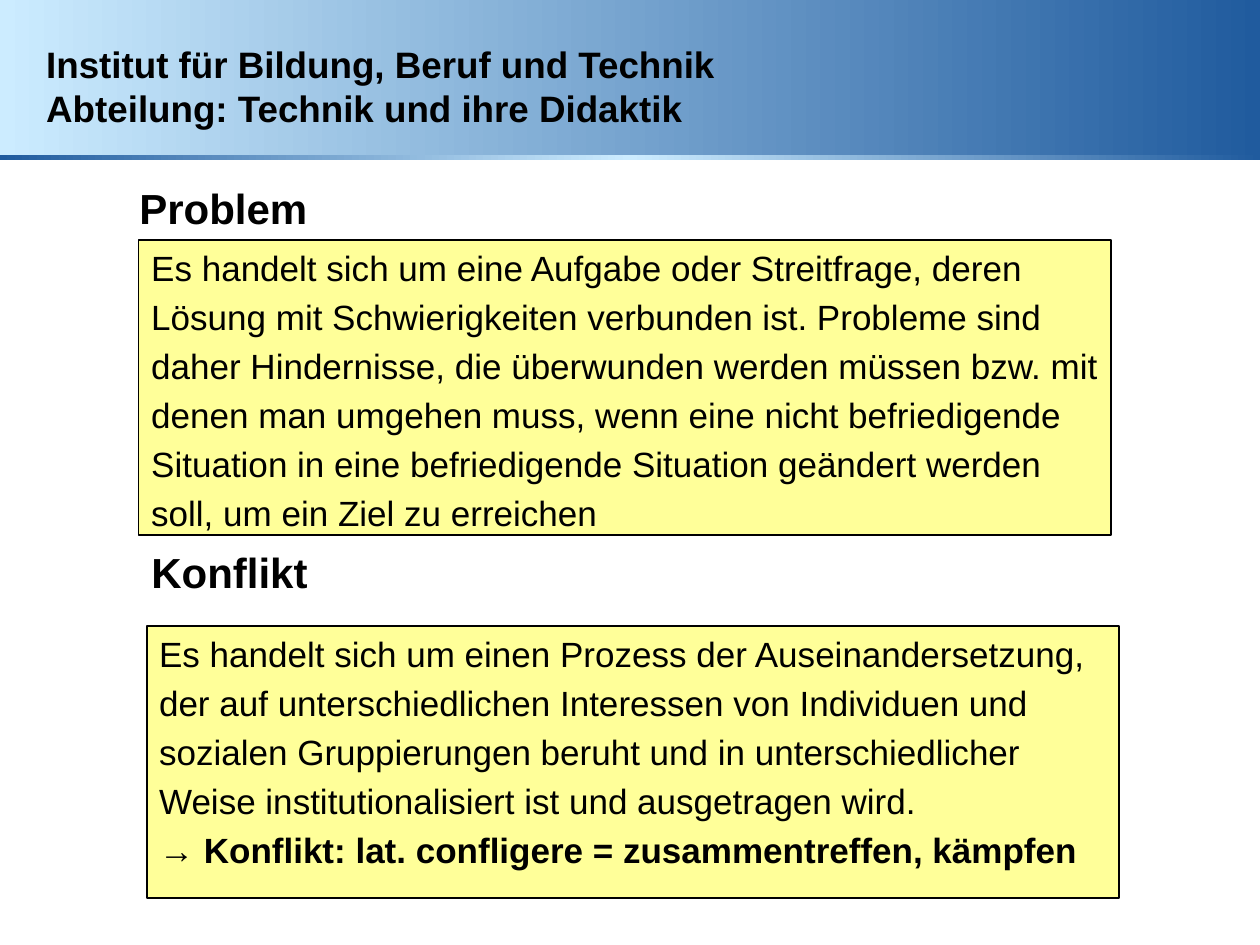
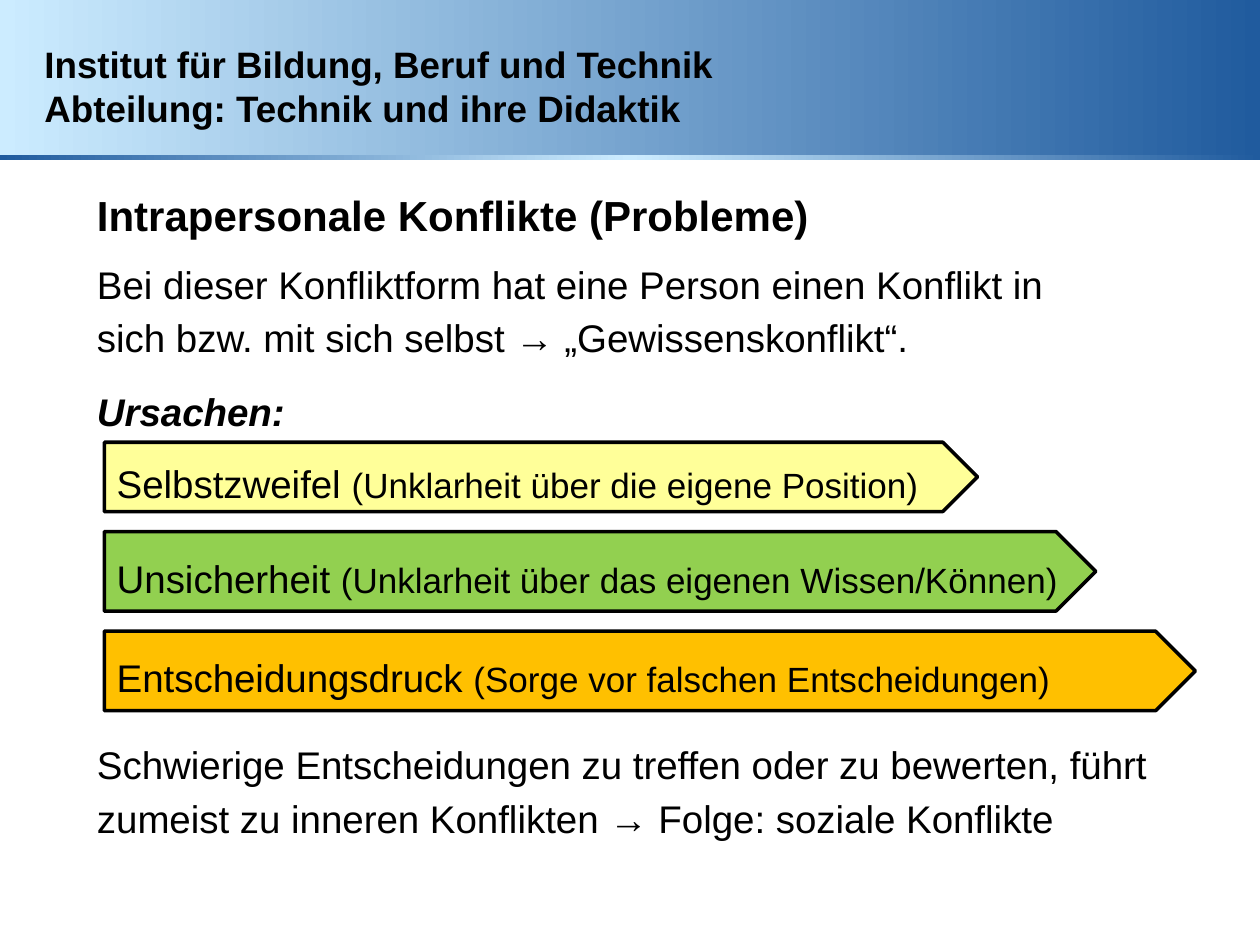
from copy import deepcopy
from dataclasses import dataclass

from pptx import Presentation
from pptx.dml.color import RGBColor
from pptx.enum.shapes import MSO_SHAPE
from pptx.enum.text import MSO_ANCHOR, MSO_AUTO_SIZE, PP_ALIGN
from pptx.oxml.ns import qn
from pptx.util import Pt

RECT, ARROW = MSO_SHAPE.RECTANGLE, MSO_SHAPE.PENTAGON
TOP, MIDDLE = MSO_ANCHOR.TOP, MSO_ANCHOR.MIDDLE
LEFT = PP_ALIGN.LEFT
FIXED = MSO_AUTO_SIZE.NONE
WIDTH, HEIGHT = 720, 540


@dataclass(frozen=True)
class Theme:
    font: str = "Arial"
    ink: str = "000000"
    pale: str = "CCECFF"
    deep: str = "205B9E"
    yellow: str = "FFFF99"
    green: str = "92D050"
    orange: str = "FFC000"
    head: int = 21
    title: int = 24
    lead: int = 22
    text: int = 20
    gap: int = 4


THEME = Theme()
INSTITUTE = ("Institut für Bildung, Beruf und Technik",
             "Abteilung: Technik und ihre Didaktik")
PROBLEM = (
    "Es handelt sich um eine Aufgabe oder Streitfrage, deren",
    "Lösung mit Schwierigkeiten verbunden ist. Probleme sind",
    "daher Hindernisse, die überwunden werden müssen bzw. mit",
    "denen man umgehen muss, wenn eine nicht befriedigende",
    "Situation in eine befriedigende Situation geändert werden",
    "soll, um ein Ziel zu erreichen",
)
CONFLICT = (
    "Es handelt sich um einen Prozess der Auseinandersetzung,",
    "der auf unterschiedlichen Interessen von Individuen und",
    "sozialen Gruppierungen beruht und in unterschiedlicher",
    "Weise institutionalisiert ist und ausgetragen wird.",
)
# Name, detail, top, width, height, colour
CAUSES = (
    ("Selbstzweifel ", "(Unklarheit über die eigene Position)",
     252.7, 499, 39.6, THEME.yellow),
    ("Unsicherheit ", "(Unklarheit über das eigenen Wissen/Können)",
     303.8, 566.6, 45.4, THEME.green),
    ("Entscheidungsdruck ", "(Sorge vor falschen Entscheidungen)",
     360.7, 623.5, 45.4, THEME.orange),
)


def place(shape, box):
    shape.left, shape.top, shape.width, shape.height = map(Pt, box)


def paint(shape, color, weight):
    shape.fill.solid()
    shape.fill.fore_color.rgb = RGBColor.from_string(color)
    shape.line.color.rgb = RGBColor.from_string(THEME.ink)
    shape.line.width = Pt(weight)


def set_frame(shape, anchor=TOP):
    frame = shape.text_frame
    frame.word_wrap = True
    frame.auto_size = FIXED
    frame.vertical_anchor = anchor
    return frame


def add_run(para, text, size, bold=False, italic=False):
    run = para.add_run()
    run.text = text
    font = run.font
    font.name, font.size = THEME.font, Pt(size)
    font.bold, font.italic = bold, italic
    font.color.rgb = RGBColor.from_string(THEME.ink)


def add_para(frame, gap=THEME.gap):
    """Return a flush-left paragraph without bullet; the first one has no gap."""
    first = frame.paragraphs[0]
    para = frame.add_paragraph() if first.runs else first
    props = para._p.get_or_add_pPr()
    props.set("marL", "0")
    props.set("indent", "0")
    props.append(props.makeelement(qn("a:buNone"), {}))
    para.alignment = LEFT
    para.space_before = Pt(gap if first.runs else 0)
    return para


def add_lines(frame, lines, size):
    for line in lines:
        add_run(add_para(frame), line, size)


def add_band(slide, layout, index, box, colors):
    """Put a horizontal gradient bar at the back of the layout."""
    band = slide.shapes.add_shape(RECT, *map(Pt, box))
    band.shadow.inherit = False
    band.line.fill.background()
    band.fill.gradient()
    band.fill.gradient_angle = 0
    stops = band.element.find(".//" + qn("a:gsLst"))
    for _ in colors[2:]:
        stops.append(deepcopy(stops[0]))
    for i, (stop, color) in enumerate(zip(band.fill.gradient_stops, colors)):
        stop.color.rgb = RGBColor.from_string(color)
        stop.position = i / (len(colors) - 1)
    layout.shapes.element.insert(2 + index, band.element)


def add_bands(slide, layout):
    pale, deep = THEME.pale, THEME.deep
    add_band(slide, layout, 0, (0, 0, WIDTH, 90.7), (pale, deep))
    add_band(slide, layout, 1, (0, 88.6, WIDTH, 2.9), (deep, pale, deep))


def add_head(slide, left):
    box = slide.shapes.add_textbox(*map(Pt, (left, 15.1, 461.5, 67.7)))
    para = add_para(set_frame(box, MIDDLE))
    for i, line in enumerate(INSTITUTE):
        if i:
            para.add_line_break()
        add_run(para, line, THEME.head, bold=True)


def add_title(shape, text, box, anchor=TOP):
    place(shape, box)
    add_run(add_para(set_frame(shape, anchor)), text, THEME.title, bold=True)


def add_shape(slide, kind, box, color, weight):
    shape = slide.shapes.add_shape(kind, *map(Pt, box))
    shape.shadow.inherit = False
    paint(shape, color, weight)
    return shape


def add_cause(slide, name, detail, top, width, height, color):
    arrow = add_shape(slide, ARROW, (59.6, top, width, height), color, 2)
    frame = set_frame(arrow, MIDDLE)
    frame.margin_top = Pt(11)
    para = add_para(frame)
    add_run(para, name, THEME.lead)
    add_run(para, detail, THEME.text)


def fill_terms(slide):
    add_head(slide, 19.3)
    add_title(slide.shapes.title, "Problem", (72.4, 100.8, 612, 45.4))
    body = slide.placeholders[1]
    place(body, (79.2, 137.2, 555.8, 168.5))
    paint(body, THEME.yellow, 1)
    add_lines(set_frame(body), PROBLEM, THEME.text)

    label = slide.shapes.add_textbox(0, 0, 0, 0)
    add_title(label, "Konflikt", (79.4, 308.9, 612, 45.4))
    box = add_shape(slide, RECT, (83.8, 357.8, 555.8, 155.5), THEME.yellow, 1)
    frame = set_frame(box)
    add_lines(frame, CONFLICT, THEME.text)
    para = add_para(frame)
    add_run(para, "→ ", THEME.text)
    add_run(para, "Konflikt: lat. confligere = zusammentreffen, kämpfen",
            THEME.text, bold=True)


def fill_causes(slide):
    add_head(slide, 18.3)
    add_title(slide.shapes.title, "Intrapersonale Konflikte (Probleme)",
              (48.2, 103, 493.2, 39.6), MIDDLE)
    body = slide.placeholders[1]
    place(body, (48.2, 145.4, 644.4, 362.9))
    frame = set_frame(body)
    add_lines(frame, (
        "Bei dieser Konfliktform hat eine Person einen Konflikt in",
        "sich bzw. mit sich selbst → „Gewissenskonflikt“.",
    ), THEME.lead)
    add_run(add_para(frame, 16), "Ursachen:", THEME.lead, True, True)
    add_run(add_para(frame, 175.5),
            "Schwierige Entscheidungen zu treffen oder zu bewerten, führt",
            THEME.lead)
    add_run(add_para(frame),
            "zumeist zu inneren Konflikten → Folge: soziale Konflikte",
            THEME.lead)
    for cause in CAUSES:
        add_cause(slide, *cause)


def main():
    deck = Presentation()
    deck.slide_width, deck.slide_height = Pt(WIDTH), Pt(HEIGHT)
    layout = deck.slide_layouts[1]
    terms, causes = (deck.slides.add_slide(layout) for _ in range(2))
    add_bands(terms, layout)
    fill_terms(terms)
    fill_causes(causes)
    deck.save("out.pptx")


if __name__ == "__main__":
    main()
